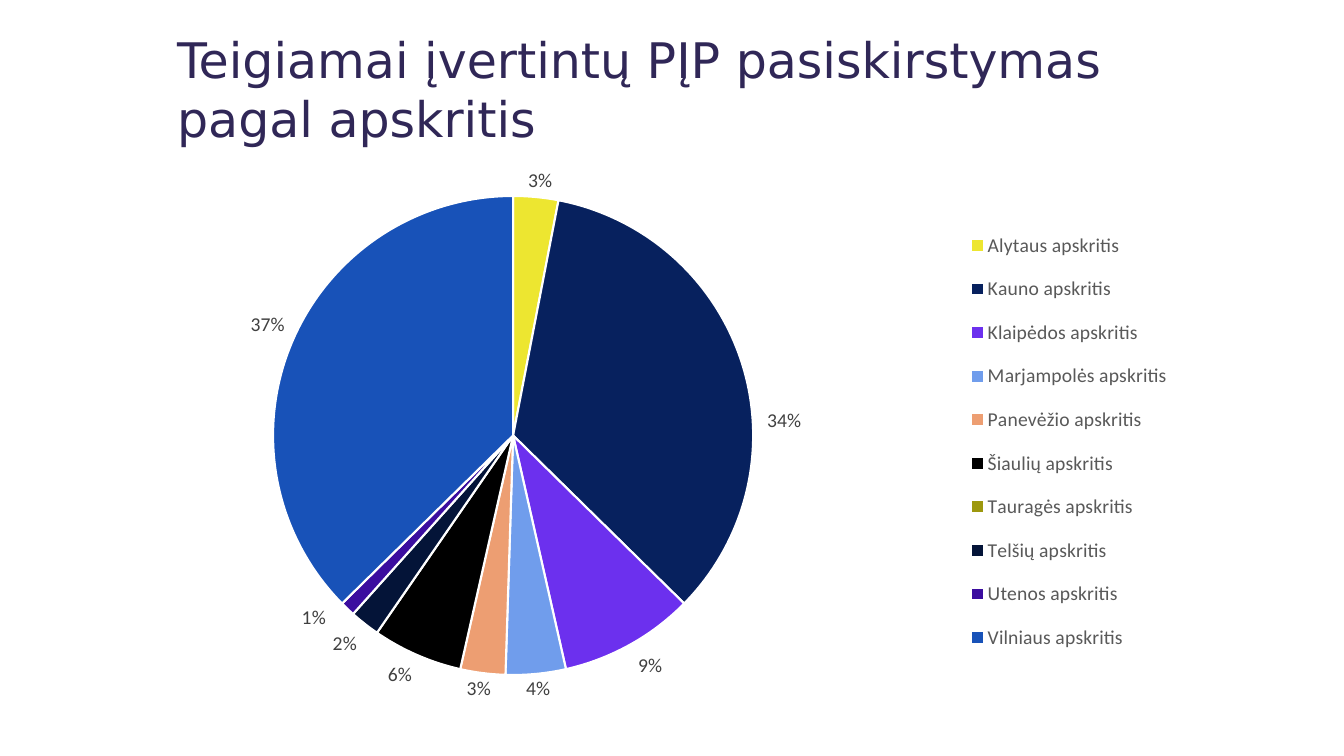
from copy import deepcopy
from math import cos, pi, sin

from lxml import etree
from pptx import Presentation
from pptx import util as u
from pptx.chart.data import CategoryChartData
from pptx.dml.color import RGBColor
from pptx.enum import chart as ch, text
from pptx.oxml import parse_xml
from pptx.oxml.ns import nsdecls, qn

PX = 914400 / 100.8
COLORS = {"title": "302757", "legend": "595959", "label": "404040", "white": "FFFFFF"}
# County, share, slice colour, centre of its label in px (None hides the label)
COUNTIES = [
    ("Alytaus", 3, "EDE630", (540, 181)),
    ("Kauno", 34, "07215E", (784, 421)),
    ("Klaipėdos", 9, "6C30EE", (650, 667)),
    ("Marjampolės", 4, "709DEC", (538, 690)),
    ("Panevėžio", 3, "ED9E72", (479, 690)),
    ("Šiaulių", 6, "000000", (400, 676)),
    ("Tauragės", 0, "9D980E", None),
    ("Telšių", 2, "041438", (345, 645)),
    ("Utenos", 1, "3B0D9F", (314, 619)),
    ("Vilniaus", 37, "1852B8", (268, 325)),
]
CHART = (114, 167, 1157, 537)
PIE = (273, 196, 480, 480)
LEGEND = (955, 214, 228, 456)


def rgb(value):
    return RGBColor.from_string(value)


def layout_xml(target, **values):
    """Return a manual layout; target is the optional inner plot area tag."""
    items = "".join(f'<c:{k} val="{v}"/>' for k, v in values.items())
    return f'<c:layout {nsdecls("c")}><c:manualLayout>{target}{items}</c:manualLayout></c:layout>'


def box_layout(box, target=""):
    """Place a px box as fractions of the chart area."""
    left, top, width, height = CHART
    x, y, w, h = box
    return parse_xml(layout_xml(
        target, xMode="edge", yMode="edge",
        x=round((x - left) / width, 4), y=round((y - top) / height, 4),
        w=round(w / width, 4), h=round(h / height, 4)))


def label_offset(middle, digits, center):
    """Shift from the outside end of a slice, at turn fraction middle, to center."""
    x, y, w, h = PIE
    dx, dy = sin(2 * pi * middle), -cos(2 * pi * middle)
    half_width = 17 if digits == 2 else 12
    base_x = x + w / 2 + dx * (w / 2 + 6) + (half_width if dx > 0 else -half_width)
    base_y = y + h / 2 + dy * (h / 2 + 6) + (12 if dy > 0 else -12)
    return round((center[0] - base_x) / CHART[2], 4), round((center[1] - base_y) / CHART[3], 4)


class Deck:
    def __init__(self):
        self.prs = Presentation()
        self.prs.slide_width, self.prs.slide_height = u.Inches(13.33), u.Inches(7.5)
        self.s = self.prs.slides.add_slide(self.prs.slide_layouts[0])
        subtitle = self.s.placeholders[1].element
        subtitle.getparent().remove(subtitle)

    def emu(self, box):
        return [u.Emu(round(v * PX)) for v in box]

    def style(self, font, name, size, color):
        font.name, font.size = name, u.Pt(size)
        font.color.rgb = rgb(COLORS[color])

    def title(self, words, box):
        sp = self.s.shapes.title
        sp.left, sp.top, sp.width, sp.height = self.emu(box)
        tf = sp.text_frame
        tf.text = words
        tf.word_wrap = True
        tf.vertical_anchor = text.MSO_ANCHOR.BOTTOM
        p = tf.paragraphs[0]
        p.alignment = text.PP_ALIGN.LEFT
        self.style(p.runs[0].font, "DejaVu Sans", 35, "title")

    def pie(self):
        data = CategoryChartData()
        data.categories = [f"{name} apskritis" for name, *_ in COUNTIES]
        data.add_series("Series 1", [share for _, share, *_ in COUNTIES])
        chart = self.s.shapes.add_chart(
            ch.XL_CHART_TYPE.PIE, *self.emu(CHART), data).chart
        chart.has_title = False
        chart.font.name, chart.font.size = "Calibri", u.Pt(10)
        plot = chart.plots[0]
        plot.vary_by_categories = True
        series = plot.series[0]
        for i, (_, _, color, _) in enumerate(COUNTIES):
            form = series.points[i].format
            form.fill.solid()
            form.fill.fore_color.rgb = rgb(color)
            form.line.color.rgb = rgb(COLORS["white"])
            form.line.width = u.Pt(1.5)
        area = chart.element.find(".//" + qn("c:plotArea"))
        self.replace_layout(area, 0, box_layout(PIE, '<c:layoutTarget val="inner"/>'))
        self.legend(chart)
        self.labels(series)

    def replace_layout(self, parent, index, layout):
        old = parent.find(qn("c:layout"))
        if old is not None:
            parent.remove(old)
        parent.insert(index, layout)

    def legend(self, chart):
        chart.has_legend = True
        legend = chart.legend
        legend.position = ch.XL_LEGEND_POSITION.BOTTOM
        legend.include_in_layout = False
        self.style(legend.font, "Calibri", 14, "legend")
        node = chart.element.find(".//" + qn("c:legend"))
        self.replace_layout(node, 1, box_layout(LEGEND))

    def labels(self, series):
        labels = series.data_labels
        labels.show_percentage, labels.show_value = True, False
        labels.number_format, labels.number_format_is_linked = "0%", False
        labels.position = ch.XL_LABEL_POSITION.OUTSIDE_END
        self.style(labels.font, "Calibri", 14, "label")
        node = series.data_labels._element
        lines = node.find(qn("c:showLeaderLines"))
        if lines is None:
            lines = etree.SubElement(node, qn("c:showLeaderLines"))
        lines.set("val", "0")
        shared = [child for child in node if child is not lines]
        total, start = sum(share for _, share, *_ in COUNTIES), 0
        for i, (_, share, _, center) in enumerate(COUNTIES):
            label = parse_xml(f'<c:dLbl {nsdecls("c")}><c:idx val="{i}"/></c:dLbl>')
            if center:
                x, y = label_offset((start + share / 2) / total, len(str(share)), center)
                label.append(parse_xml(layout_xml("", x=x, y=y)))
                label.extend(deepcopy(child) for child in shared)
            else:
                etree.SubElement(label, qn("c:delete")).set("val", "1")
            node.insert(i, label)
            start += share


def main():
    deck = Deck()
    deck.title("Teigiamai įvertintų PĮP pasiskirstymas pagal apskritis", (167, 39, 1059, 113))
    deck.pie()
    deck.prs.save("out.pptx")


if __name__ == "__main__":
    main()
